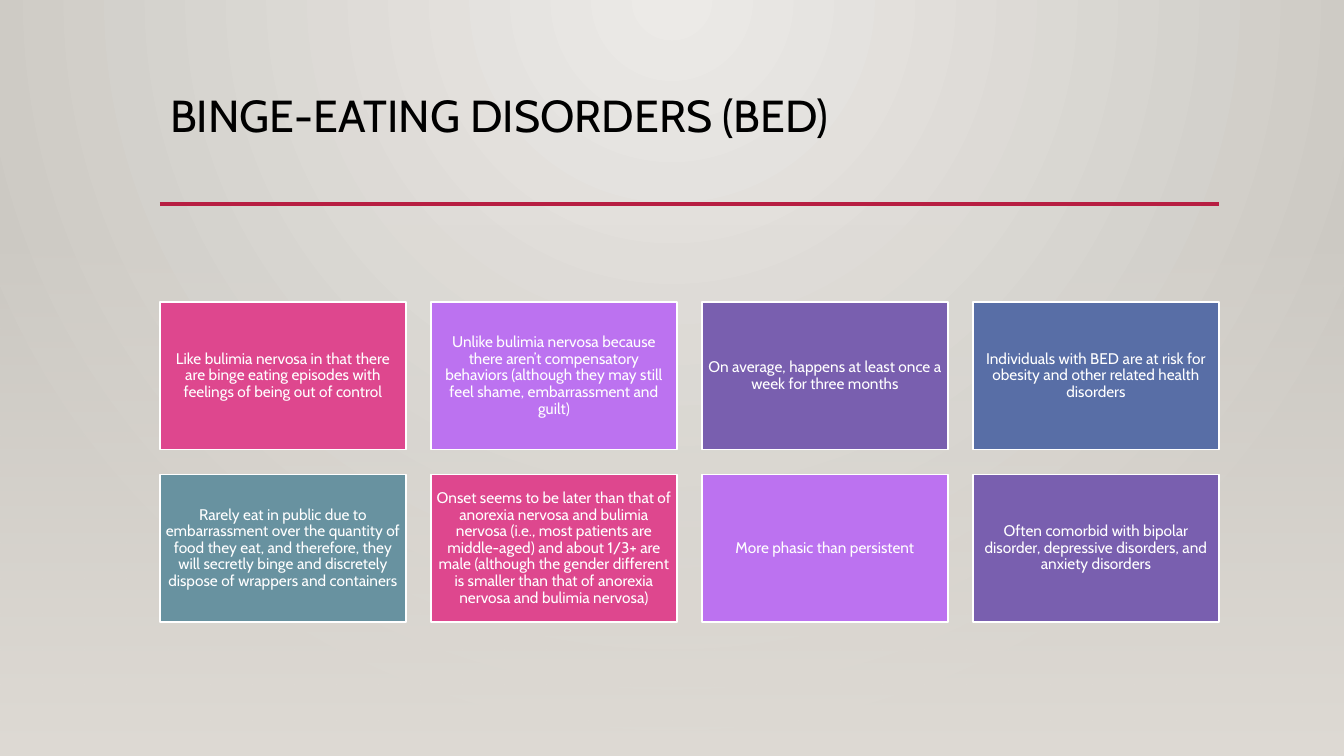
from dataclasses import dataclass
from itertools import cycle

from lxml import etree
from pptx import Presentation
from pptx.dml.color import RGBColor
from pptx.enum.shapes import MSO_CONNECTOR, MSO_SHAPE
from pptx.enum.text import MSO_ANCHOR, MSO_AUTO_SIZE, PP_ALIGN
from pptx.oxml.ns import qn
from pptx.util import Pt

RECT = MSO_SHAPE.RECTANGLE
STRAIGHT = MSO_CONNECTOR.STRAIGHT
TOP, MIDDLE = MSO_ANCHOR.TOP, MSO_ANCHOR.MIDDLE
LEFT, CENTER = PP_ALIGN.LEFT, PP_ALIGN.CENTER
NO_AUTOFIT = MSO_AUTO_SIZE.NONE
EMU_PER_PX = 914400 / 100.8
TITLE_ONLY = 5


@dataclass(frozen=True)
class Theme:
    """Colours, font and type sizes of the slide."""
    font: str = "Cabin"
    title_size: int = 32
    card_size: int = 11
    ink: str = "000000"
    white: str = "FFFFFF"
    rule: str = "B71E42"
    glow: str = "ECEAE7"
    edge: str = "CAC7C1"
    floor: str = "DFDBD5"
    cards: tuple = ("DE478E", "BC72F0", "795FAF", "586EA6", "6892A0")


THEME = Theme()
TITLE = "BINGE-EATING DISORDERS (BED)"
FACTS = (
    "Like bulimia nervosa in that there are binge eating episodes with "
    "feelings of being out of control",
    "Unlike bulimia nervosa because there aren’t compensatory behaviors "
    "(although they may still feel shame, embarrassment and guilt)",
    "On average, happens at least once a week for three months",
    "Individuals with BED are at risk for obesity and other related health disorders",
    "Rarely eat in public due to embarrassment over the quantity of food they eat, "
    "and therefore, they will secretly binge and discretely dispose of wrappers "
    "and containers",
    "Onset seems to be later than that of anorexia nervosa and bulimia nervosa "
    "(i.e., most patients are middle-aged) and about 1/3+ are male (although the "
    "gender different is smaller than that of anorexia nervosa and bulimia nervosa)",
    "More phasic than persistent",
    "Often comorbid with bipolar disorder, depressive disorders, and anxiety disorders",
)


def px(*lengths):
    """Turn pixel lengths into a list of EMU."""
    return [round(n * EMU_PER_PX) for n in lengths]


def rgb(code):
    """Return the colour of a hex code."""
    return RGBColor.from_string(code)


def apply(target, formats):
    """Set every attribute of a dict of format values."""
    for name, value in formats.items():
        setattr(target, name, value)


def set_gradient(fill, start, end):
    """Give a fill a two-stop gradient running downwards."""
    fill.gradient()
    fill.gradient_angle = 270
    for stop, position, code in zip(fill.gradient_stops, (0, 1), (start, end)):
        stop.position = position
        stop.color.rgb = rgb(code)


def write(tf, text, size, color, align, anchor, inset=None):
    """Write one formatted paragraph into a text frame."""
    apply(tf, {"word_wrap": True, "auto_size": NO_AUTOFIT, "vertical_anchor": anchor})
    if inset is not None:
        margin, = px(inset)
        apply(tf, {f"margin_{side}": margin for side in ("left", "top", "right", "bottom")})
    p = tf.paragraphs[0]
    apply(p, {"alignment": align, "line_spacing": 0.9})
    r = p.add_run()
    r.text = text
    apply(r.font, {"name": THEME.font, "size": Pt(size)})
    r.font.color.rgb = rgb(color)


def add_backdrop(s, x, y, w, h):
    """Paint the radial background and the fade over the given box."""
    set_gradient(s.background.fill, THEME.glow, THEME.edge)
    lin = next(s._element.iter(qn("a:lin")))
    radial = etree.Element(qn("a:path"), {"path": "circle"})
    etree.SubElement(radial, qn("a:fillToRect"),
                     {"l": "43000", "t": "0", "r": "43000", "b": "100000"})
    lin.getparent().replace(lin, radial)

    fade = s.shapes.add_shape(RECT, *px(x, y, w, h))
    fade.shadow.inherit = False
    fade.line.fill.background()
    set_gradient(fade.fill, THEME.floor, THEME.floor)
    first_color = next(fade._element.iter(qn("a:srgbClr")))
    etree.SubElement(first_color, qn("a:alpha"), {"val": "0"})


def add_title(s, x, y, w, h):
    """Place the title in the box and a rule along its bottom edge."""
    title = s.shapes.title
    apply(title, dict(zip(("left", "top", "width", "height"), px(x, y, w, h))))
    write(title.text_frame, TITLE, THEME.title_size, THEME.ink, LEFT, TOP)

    rule = s.shapes.add_connector(STRAIGHT, *px(x, y + h, x + w, y + h))
    rule.line.width = Pt(2.5)
    rule.line.color.rgb = rgb(THEME.rule)
    etree.SubElement(rule._element.spPr, qn("a:effectLst"))


def add_card(s, text, color, x, y, w, h):
    """Draw one coloured card with centred text."""
    card = s.shapes.add_shape(RECT, *px(x, y, w, h))
    card.shadow.inherit = False
    card.fill.solid()
    card.fill.fore_color.rgb = rgb(color)
    card.line.width = Pt(1.25)
    card.line.color.rgb = rgb(THEME.white)
    write(card.text_frame, text, THEME.card_size, THEME.white, CENTER, MIDDLE, inset=5)


def add_cards(s, x, y, w, h, cols=4, gap=25):
    """Fill the box with a grid of cards in cycling colours."""
    rows = -(-len(FACTS) // cols)
    card_w = (w - gap * (cols - 1)) / cols
    card_h = (h - gap * (rows - 1)) / rows
    for i, (text, color) in enumerate(zip(FACTS, cycle(THEME.cards))):
        row, col = divmod(i, cols)
        add_card(s, text, color, x + col * (card_w + gap), y + row * (card_h + gap),
                 card_w, card_h)


def main():
    """Build and save the slide."""
    prs = Presentation()
    prs.slide_width, prs.slide_height = px(1344, 756)
    s = prs.slides.add_slide(prs.slide_layouts[TITLE_ONLY])
    add_backdrop(s, 0, 223, 1344, 533)
    add_title(s, 160, 89, 1059, 115)
    add_cards(s, 160, 302, 1059, 320)
    prs.save("out.pptx")


if __name__ == "__main__":
    main()
